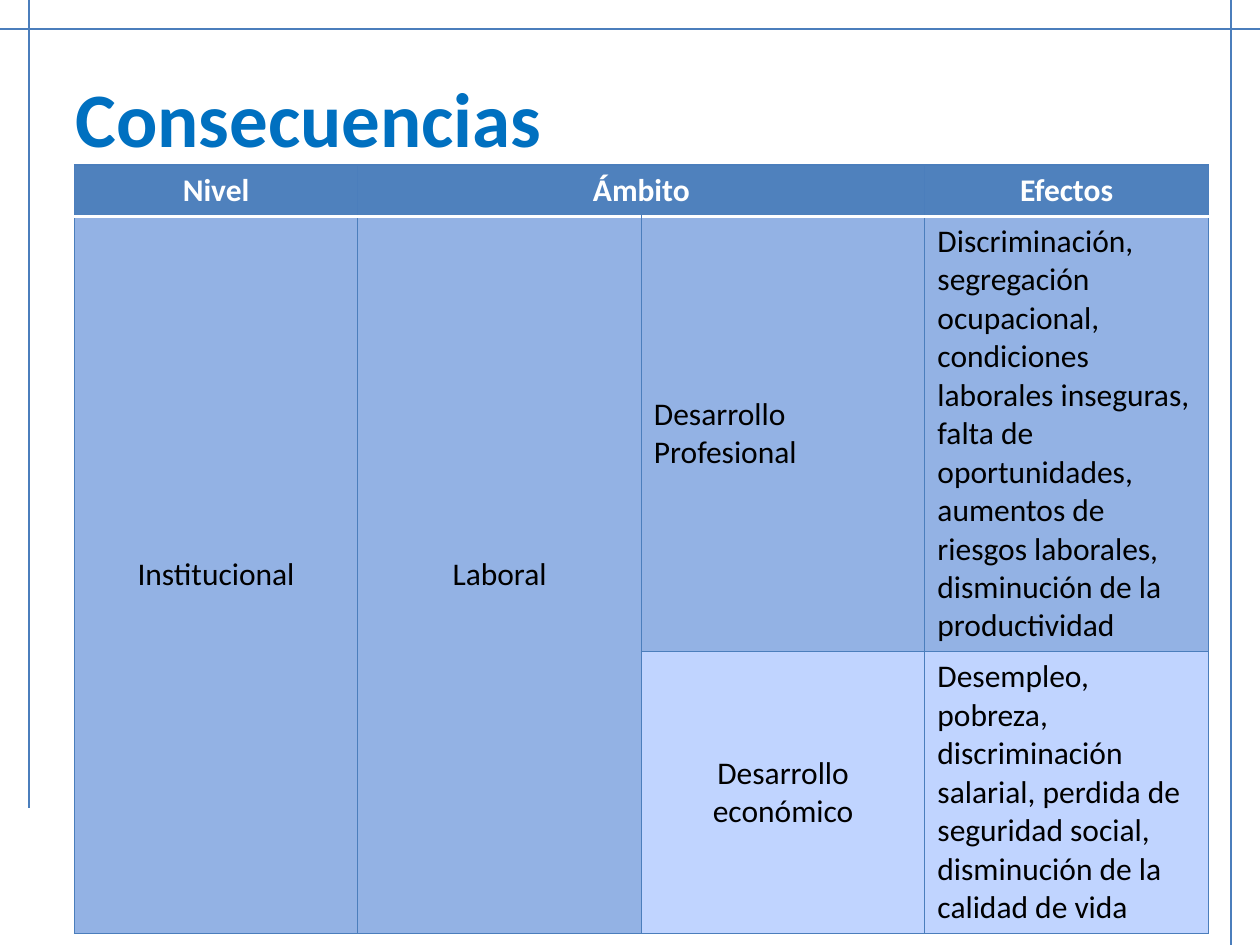
"""Build the slide on consequences by level and field."""
import pptx
import pptx.dml.color
import pptx.enum.shapes
import pptx.enum.text
import pptx.oxml
import pptx.oxml.ns
import pptx.util
from pptx.util import Inches

FONT = "Calibri"
LINE = "4B7EBC"
HEAD = "4F81BD"
DARK = "93B2E4"
PALE = "C0D4FF"
WHITE = "FFFFFF"
BLACK = "000000"
LEFT = pptx.enum.text.PP_ALIGN.LEFT
MID = pptx.enum.text.PP_ALIGN.CENTER
TOP = pptx.enum.text.MSO_ANCHOR.TOP
CENTER = pptx.enum.text.MSO_ANCHOR.MIDDLE

GUIDES = [(0.23, 0, 0.23, 6.41), (0, 0.23, 10, 0.23), (9.77, 0, 9.77, 7.5)]
ROWS = [0.4, 3.45, 2.24]
SPANS = [(0, 1, 0, 2), (1, 0, 2, 0), (1, 1, 2, 1)]
FILLS = [[HEAD] * 4, [DARK] * 4, [DARK, DARK, PALE, PALE]]
CELLS = [
    (0, 0, "Nivel", MID, TOP),
    (0, 1, "Ámbito", MID, TOP),
    (0, 3, "Efectos", MID, TOP),
    (1, 0, "Institucional", MID, CENTER),
    (1, 1, "Laboral", MID, CENTER),
    (1, 2, "Desarrollo Profesional", LEFT, CENTER),
    (1, 3, "Discriminación, segregación ocupacional, condiciones laborales "
     "inseguras, falta de oportunidades, aumentos de riesgos laborales, "
     "disminución de la productividad", LEFT, TOP),
    (2, 2, "Desarrollo económico", MID, CENTER),
    (2, 3, "Desempleo, pobreza, discriminación salarial, perdida de seguridad "
     "social, disminución de la calidad de vida", LEFT, TOP),
]


def color(code):
    """Turn a hex string into a colour."""
    return pptx.dml.color.RGBColor.from_string(code)


def write(frame, text, size, code, bold, align):
    """Put one run of text in the first paragraph of a frame."""
    para = frame.paragraphs[0]
    para.alignment = align
    run = para.add_run()
    run.text = text
    run.font.name = FONT
    run.font.size = pptx.util.Pt(size)
    run.font.bold = bold
    run.font.color.rgb = color(code)


def add_guide(slide, ends):
    """Draw one thin guide line."""
    line = slide.shapes.add_connector(
        pptx.enum.shapes.MSO_CONNECTOR.STRAIGHT, *map(Inches, ends))
    line.line.color.rgb = color(LINE)
    line.line.width = pptx.util.Pt(0.75)
    props = line._element.spPr
    props.append(pptx.oxml.parse_xml(
        f'<a:effectLst {pptx.oxml.ns.nsdecls("a")}/>'))


def add_title(slide, text):
    """Fill the title placeholder."""
    title = slide.shapes.title
    title.left, title.top = Inches(0.5), Inches(0.3)
    title.width, title.height = Inches(9), Inches(1.25)
    title.text_frame.vertical_anchor = CENTER
    write(title.text_frame, text, 44, "0070C0", True, LEFT)


def set_edge(cell, side, code, width):
    """Draw one border of a cell."""
    cell._tc.get_or_add_tcPr().append(pptx.oxml.parse_xml(
        f'<a:ln{side} {pptx.oxml.ns.nsdecls("a")} w="{pptx.util.Pt(width)}">'
        f'<a:solidFill><a:srgbClr val="{code}"/></a:solidFill></a:ln{side}>'))


def style_cell(cell, row, fill):
    """Set the borders and the fill of a cell."""
    rule = (WHITE, 2)
    thin = (LINE, 0.75)
    set_edge(cell, "L", *thin)
    set_edge(cell, "R", *thin)
    set_edge(cell, "T", *(rule if row == 1 else thin))
    set_edge(cell, "B", *(rule if row == 0 else thin))
    cell.fill.solid()
    cell.fill.fore_color.rgb = color(fill)


def add_grid(slide):
    """Add the table of levels, fields and effects."""
    table = slide.shapes.add_table(
        len(ROWS), 4, Inches(0.59), Inches(1.31),
        Inches(9), Inches(sum(ROWS))).table
    for row, tall in enumerate(ROWS):
        table.rows[row].height = Inches(tall)
        for col, fill in enumerate(FILLS[row]):
            style_cell(table.cell(row, col), row, fill)
    for top, left, low, right in SPANS:
        table.cell(top, left).merge(table.cell(low, right))
    for row, col, text, align, anchor in CELLS:
        cell = table.cell(row, col)
        cell.vertical_anchor = anchor
        head = row == 0
        write(cell.text_frame, text, 18, WHITE if head else BLACK, head, align)


def main():
    """Build and save the slide."""
    deck = pptx.Presentation()
    deck.slide_width, deck.slide_height = Inches(10), Inches(7.5)
    slide = deck.slides.add_slide(deck.slide_layouts[5])
    for ends in GUIDES:
        add_guide(slide, ends)
    add_title(slide, "Consecuencias")
    add_grid(slide)
    deck.save("out.pptx")


if __name__ == "__main__":
    main()
